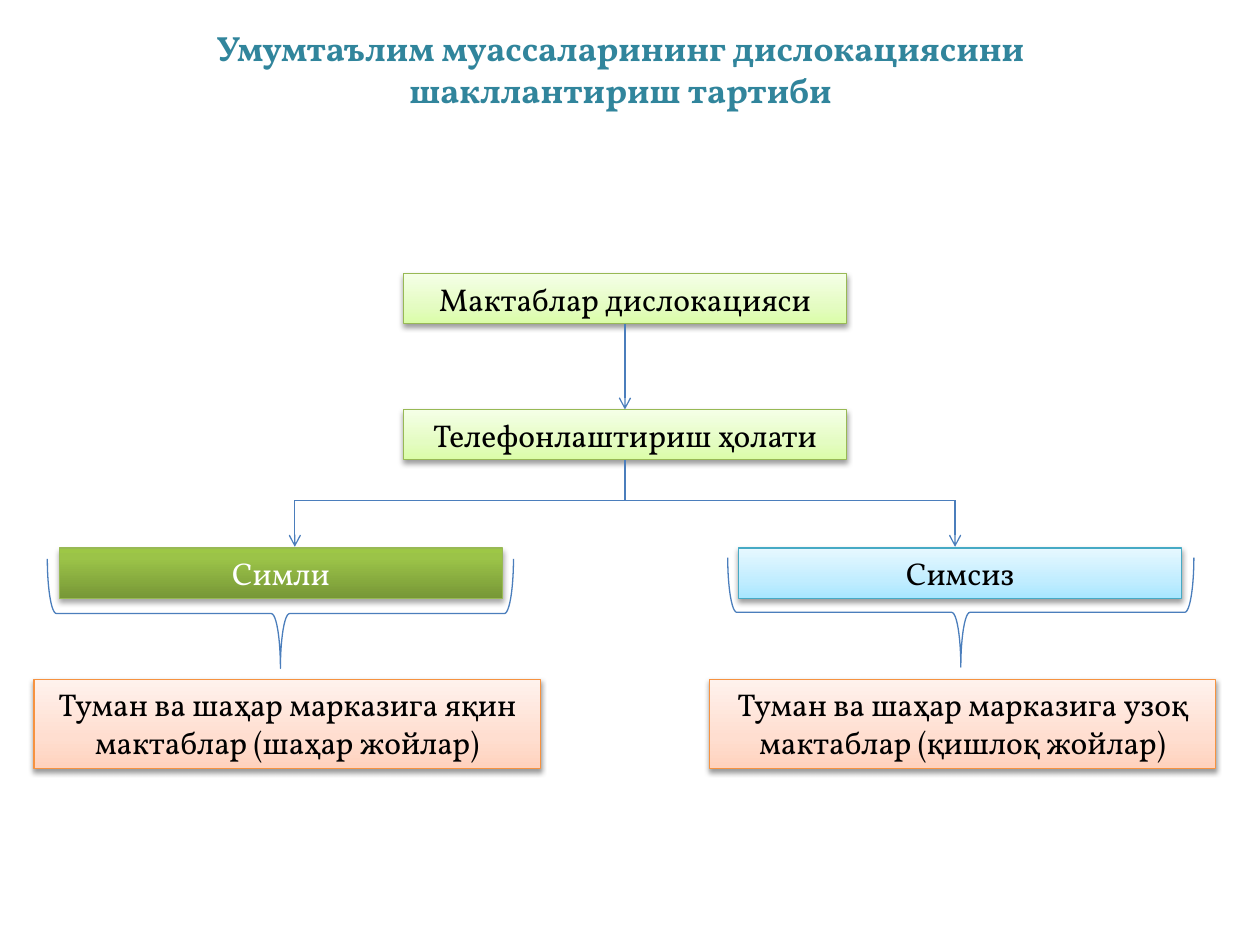
"""Build a one-slide flow chart of how school locations are arranged."""
from dataclasses import dataclass
from typing import Optional

from lxml import etree
from pptx import Presentation
from pptx import util as u
from pptx.dml.color import RGBColor
from pptx.enum import shapes, text
from pptx.oxml import ns, parse_xml

COLUMNS, ROWS = 100, 75
CELL = u.Inches(10) // COLUMNS
BOX_WIDTH, BOX_HEIGHT = 35.2, 4
NOTE_WIDTH, NOTE_HEIGHT = 40.2, 7.1
BRACE_DEPTH, BRACE_SPAN = 8.7, 37


@dataclass(frozen=True)
class Finish:
    stops: tuple
    line: str
    ink: str = "000000"
    shadow_alpha: int = 38
    shadow_distance: float = 1.6


@dataclass(frozen=True)
class Theme:
    font: str = "Vollkorn"
    title_size: int = 20
    body_size: int = 18
    line_width: float = 0.75
    shadow_blur: float = 3.1
    title: str = "31859C"
    connector: str = "4B7EBC"
    shadow: str = "000000"
    lime: Finish = Finish(((0, "DAFDA7"), (35, "E4FCC2"), (100, "F5FFE7")), "98B955")
    green: Finish = Finish(((0, "779737"), (80, "9BC348"), (100, "9DC746")), "98B955", "FFFFFF", 35, 1.8)
    blue: Finish = Finish(((0, "A7E6FF"), (35, "C1EDFF"), (100, "E7F8FF")), "46AAC5")
    peach: Finish = Finish(((0, "FFD2BD"), (35, "FFDED0"), (100, "FFF2ED")), "F69240")


@dataclass(frozen=True)
class Box:
    label: str
    column: float
    row: float
    finish: Finish
    width: float = BOX_WIDTH
    height: float = BOX_HEIGHT


@dataclass(frozen=True)
class Link:
    start: tuple
    end: tuple
    arrow: bool = False
    source: Optional[str] = None
    target: Optional[str] = None


THEME = Theme()
TITLE = ("Умумтаълим муассаларининг дислокациясини", "шакллантириш тартиби")
SCHOOLS, PHONES = "Мактаблар дислокацияси", "Телефонлаштириш ҳолати"
BOXES = (
    Box(SCHOOLS, 32, 21.7, THEME.lime),
    Box("Симли", 4.7, 43.5, THEME.green),
    Box("Симсиз", 58.6, 43.5, THEME.blue),
    Box(PHONES, 32, 32.5, THEME.lime),
    Box("Туман ва шаҳар марказига яқин мактаблар (шаҳар жойлар)",
        2.7, 53.9, THEME.peach, NOTE_WIDTH, NOTE_HEIGHT),
    Box("Туман ва шаҳар марказига узоқ мактаблар (қишлоқ жойлар)",
        56.3, 53.9, THEME.peach, NOTE_WIDTH, NOTE_HEIGHT),
)
TRUNK, LEFT, RIGHT = 49.6, 23.4, 75.8
FORK, BRANCH_END = 39.7, 43.4
LINKS = (
    Link((TRUNK, 25.7), (TRUNK, 32.5), True, SCHOOLS, PHONES),
    Link((LEFT, FORK), (LEFT, BRANCH_END), True),
    Link((RIGHT, FORK), (RIGHT, BRANCH_END), True),
    Link((LEFT, FORK), (RIGHT, FORK)),
    Link((TRUNK, 36.5), (TRUNK, FORK), source=PHONES),
)
BRACES = ((17.9, 30.2), (71.9, 30.1))


def grid(*cells: float) -> list:
    """Turn grid cells into slide lengths."""
    return [u.Emu(round(cell * CELL)) for cell in cells]


def set_line(line, color: str) -> None:
    """Give an outline its colour and the common width."""
    line.color.rgb = RGBColor.from_string(color)
    line.width = u.Pt(THEME.line_width)


def write(shape, lines: tuple, size: int, color: str, bold: bool = False) -> None:
    """Write centred lines of text into a shape."""
    frame = shape.text_frame
    frame.word_wrap = True
    frame.auto_size = text.MSO_AUTO_SIZE.SHAPE_TO_FIT_TEXT
    frame.vertical_anchor = text.MSO_ANCHOR.TOP
    paragraph = frame.paragraphs[0]
    paragraph.alignment = text.PP_ALIGN.CENTER
    for index, line in enumerate(lines):
        if index:
            paragraph.add_line_break()
        run = paragraph.add_run()
        run.text = line
        run.font.name = THEME.font
        run.font.size = u.Pt(size)
        run.font.bold = bold
        run.font.color.rgb = RGBColor.from_string(color)


def apply_finish(shape, finish: Finish) -> None:
    """Give a shape its gradient, outline and soft shadow."""
    set_line(shape.line, finish.line)
    properties = shape._element.spPr
    stops = "".join(
        f'<a:gs pos="{position * 1000}"><a:srgbClr val="{color}"/></a:gs>'
        for position, color in finish.stops)
    properties.find(ns.qn("a:prstGeom")).addnext(parse_xml(
        f'<a:gradFill {ns.nsdecls("a")} rotWithShape="1"><a:gsLst>{stops}</a:gsLst>'
        '<a:lin ang="16200000" scaled="0"/></a:gradFill>'))
    properties.append(parse_xml(
        f'<a:effectLst {ns.nsdecls("a")}><a:outerShdw blurRad="{u.Pt(THEME.shadow_blur)}" '
        f'dist="{u.Pt(finish.shadow_distance)}" dir="5400000" rotWithShape="0">'
        f'<a:srgbClr val="{THEME.shadow}"><a:alpha val="{finish.shadow_alpha * 1000}"/>'
        '</a:srgbClr></a:outerShdw></a:effectLst>'))


def add_box(slide, box: Box):
    """Draw a labelled box."""
    shape = slide.shapes.add_shape(
        shapes.MSO_SHAPE.RECTANGLE, *grid(box.column, box.row, box.width, box.height))
    apply_finish(shape, box.finish)
    write(shape, (box.label,), THEME.body_size, box.finish.ink)
    return shape


def add_link(slide, link: Link, drawn: dict) -> None:
    """Draw a straight link, joined to its boxes where it has any."""
    connector = slide.shapes.add_connector(
        shapes.MSO_CONNECTOR.STRAIGHT, *grid(*link.start, *link.end))
    if link.source:
        connector.begin_connect(drawn[link.source], 2)
    if link.target:
        connector.end_connect(drawn[link.target], 0)
    set_line(connector.line, THEME.connector)
    if link.arrow:
        etree.SubElement(connector.line._get_or_add_ln(), ns.qn("a:tailEnd"), type="arrow")
    etree.SubElement(connector._element.spPr, ns.qn("a:effectLst"))


def add_brace(slide, column: float, row: float) -> None:
    """Draw a brace turned to point down."""
    brace = slide.shapes.add_shape(
        shapes.MSO_SHAPE.RIGHT_BRACE, *grid(column, row, BRACE_DEPTH, BRACE_SPAN))
    brace.rotation = 90
    brace.fill.background()
    set_line(brace.line, THEME.connector)
    brace.shadow.inherit = False


def main() -> None:
    """Build and save the presentation."""
    presentation = Presentation()
    presentation.slide_width, presentation.slide_height = grid(COLUMNS, ROWS)
    slide = presentation.slides.add_slide(presentation.slide_layouts[6])
    drawn = {box.label: add_box(slide, box) for box in BOXES}
    for link in LINKS:
        add_link(slide, link, drawn)
    for column, row in BRACES:
        add_brace(slide, column, row)
    title = slide.shapes.add_textbox(*grid(1.6, 1.6, 95.3, 7.7))
    write(title, TITLE, THEME.title_size, THEME.title, bold=True)
    presentation.save("out.pptx")


if __name__ == "__main__":
    main()
